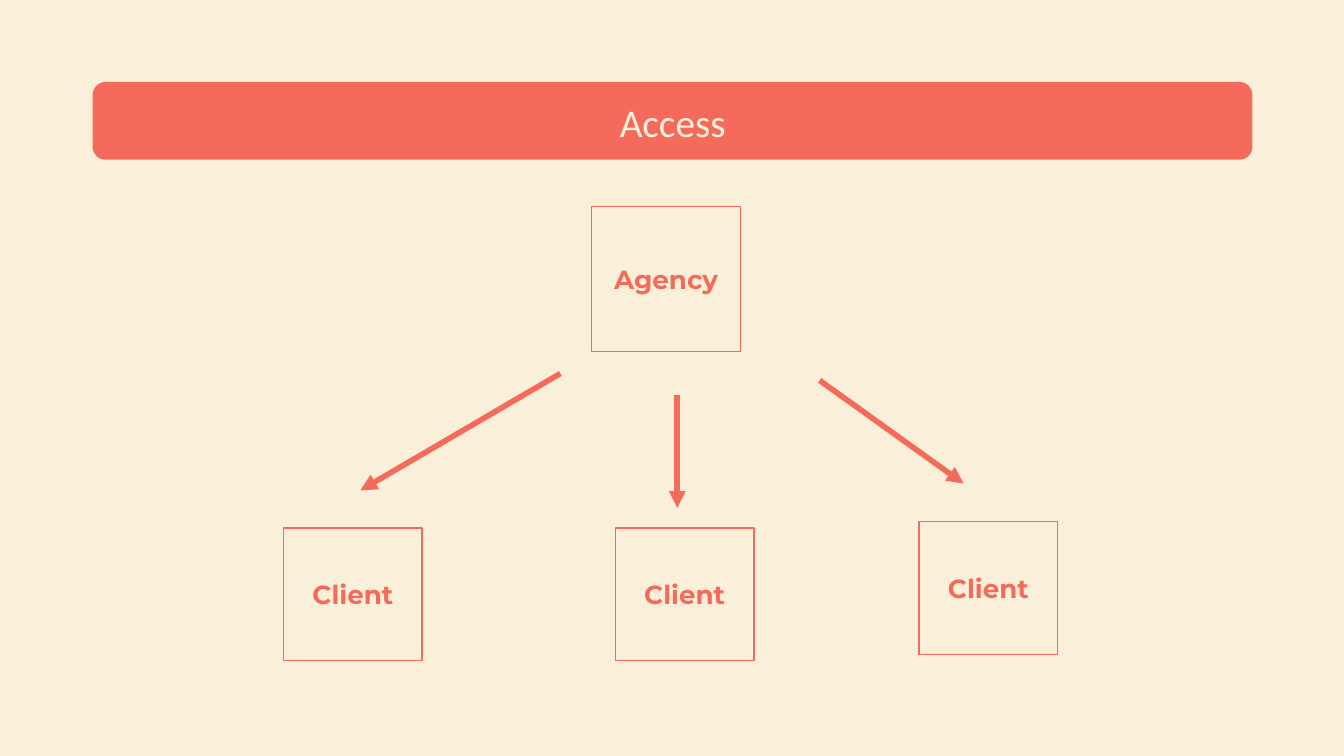
from lxml import etree
from pptx import Presentation
from pptx.dml.color import RGBColor
from pptx.enum.shapes import MSO_CONNECTOR, MSO_SHAPE
from pptx.enum.text import MSO_ANCHOR, MSO_AUTO_SIZE, PP_ALIGN
from pptx.oxml.ns import qn
from pptx.util import Cm, Pt

RECT, ROUNDED = MSO_SHAPE.RECTANGLE, MSO_SHAPE.ROUNDED_RECTANGLE
STRAIGHT = MSO_CONNECTOR.STRAIGHT
MIDDLE, CENTER, NO_FIT = MSO_ANCHOR.MIDDLE, PP_ALIGN.CENTER, MSO_AUTO_SIZE.NONE
CORAL, CREAM = "F46B5C", "FAEFD9"


def rgb(value):
    return RGBColor.from_string(value)


def write(sp, text, font="Montserrat", size=14, color=CORAL, bold=False):
    tf = sp.text_frame
    tf.word_wrap = True
    tf.auto_size = NO_FIT
    tf.vertical_anchor = MIDDLE
    tf.margin_left = tf.margin_right = tf.margin_top = tf.margin_bottom = Cm(0.25)
    p = tf.paragraphs[0]
    p.alignment = CENTER
    r = p.add_run()
    r.text = text
    r.font.name, r.font.size, r.font.bold = font, Pt(size), bold
    r.font.color.rgb = rgb(color)


# Slide and background
prs = Presentation()
prs.slide_width, prs.slide_height = Cm(25.4), Cm(14.29)
s = prs.slides.add_slide(prs.slide_layouts[5])
s.background.fill.solid()
s.background.fill.fore_color.rgb = rgb(CREAM)

# Title over its bar
title = s.shapes.title
title.left, title.top, title.width, title.height = Cm(2.01), Cm(1.5), Cm(21.41), Cm(1.6)
write(title, "Access", font="Calibri", size=21, color=CREAM)

bar = s.shapes.add_shape(ROUNDED, Cm(1.75), Cm(1.55), Cm(21.92), Cm(1.47))
bar.shadow.inherit = False
bar.fill.solid()
bar.fill.fore_color.rgb = rgb(CORAL)
bar.line.fill.background()
title._element.addprevious(bar._element)

# Arrows from the agency to each client
arrows = [
    (10.59, 7.06, 6.81, 9.27),
    (12.8, 7.47, 12.8, 9.6),
    (15.49, 7.19, 18.21, 9.14),
]
for ends in arrows:
    arrow = s.shapes.add_connector(STRAIGHT, *map(Cm, ends))
    arrow.line.color.rgb = rgb(CORAL)
    arrow.line.width = Pt(3)
    etree.SubElement(arrow.line._get_or_add_ln(), qn("a:tailEnd"), type="triangle")
    etree.SubElement(arrow._element.spPr, qn("a:effectLst"))

# Agency and client boxes
boxes = [
    ("Agency", 11.18, 3.91, 2.82, 2.74),
    ("Client", 5.36, 9.98, 2.62, 2.51),
    ("Client", 11.63, 9.98, 2.62, 2.51),
    ("Client", 17.37, 9.86, 2.62, 2.51),
]
for label, *frame in boxes:
    box = s.shapes.add_shape(RECT, *map(Cm, frame))
    box.shadow.inherit = False
    box.fill.solid()
    box.fill.fore_color.rgb = rgb(CREAM)
    box.line.color.rgb = rgb(CORAL)
    box.line.width = Pt(0.75)
    write(box, label, bold=True)

prs.save("out.pptx")
